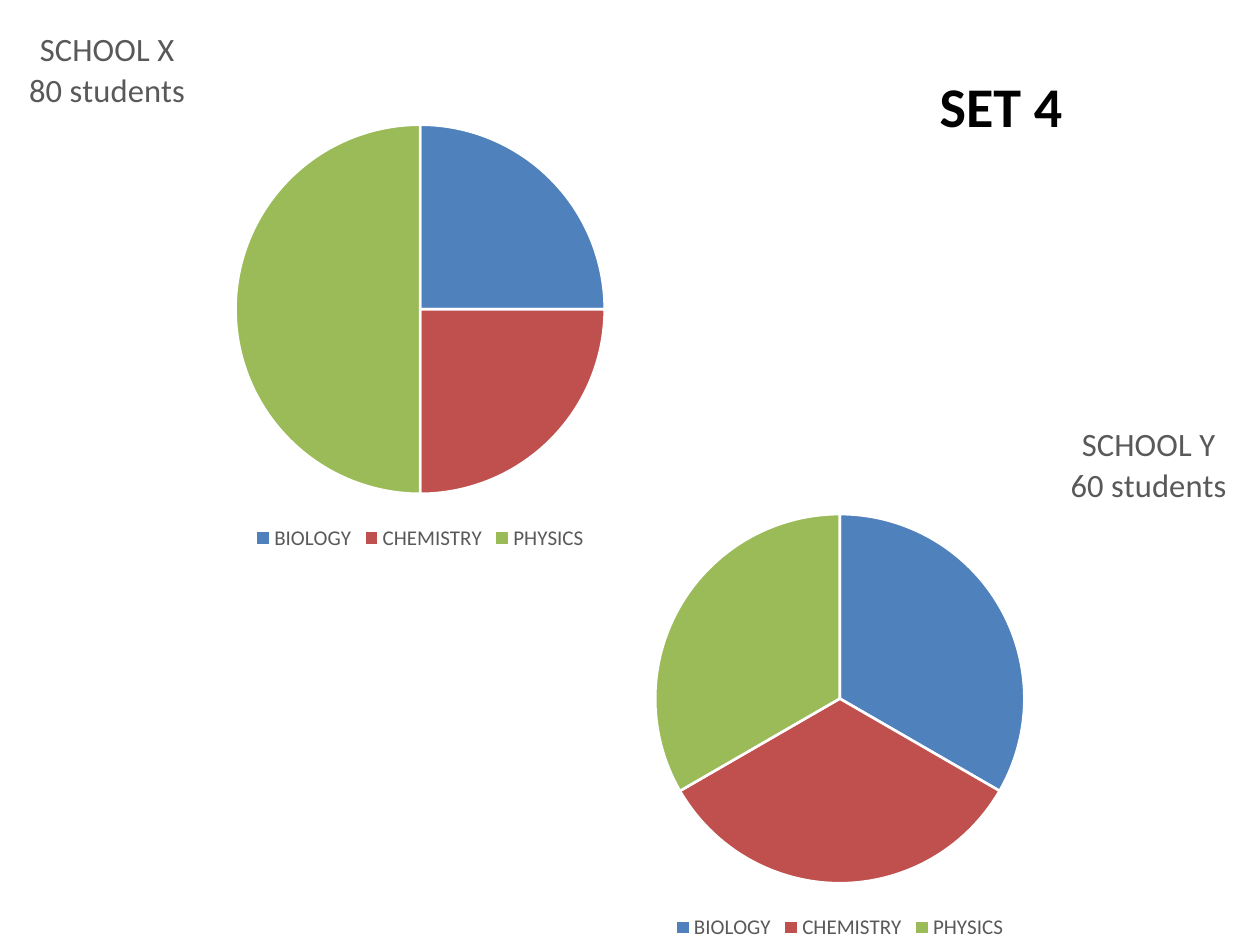
from dataclasses import dataclass

from pptx import Presentation
from pptx.chart.data import CategoryChartData
from pptx.dml.color import RGBColor
from pptx.enum.chart import XL_CHART_TYPE, XL_LEGEND_POSITION
from pptx.enum.text import MSO_ANCHOR, PP_ALIGN
from pptx.oxml import parse_xml
from pptx.oxml.ns import nsdecls
from pptx.util import Cm, Pt


@dataclass(frozen=True)
class Theme:
    font: str = "Calibri"
    black: RGBColor = RGBColor(0, 0, 0)
    grey: RGBColor = RGBColor(0x59, 0x59, 0x59)
    white: RGBColor = RGBColor(0xFF, 0xFF, 0xFF)
    slices: tuple = tuple(map(RGBColor.from_string, ("4F81BD", "C0504D", "9BBB59")))
    heading: float = 32
    chart_title: float = 18.6
    legend: float = 12
    slice_border: float = 1.5


@dataclass(frozen=True)
class School:
    name: str
    students: str
    shares: tuple
    left: float
    top: float
    title_at: tuple  # fractions of the chart's width and height


THEME = Theme()
PAGE_WIDTH, PAGE_HEIGHT = 25.4, 19.05
CHART_WIDTH, CHART_HEIGHT = 16.94, 11.28
SUBJECTS = ("BIOLOGY", "CHEMISTRY", "PHYSICS")
PIE_AREA = {"x": 0.28, "y": 0.23, "w": 0.44, "h": 0.66}
SCHOOLS = (
    School("SCHOOL X", "80 students", (25, 25, 50), 0, -0.08, (0.03, 0.05)),
    School("SCHOOL Y", "60 students", (33, 33, 33),
           PAGE_WIDTH - CHART_WIDTH, PAGE_HEIGHT - CHART_HEIGHT, (0.77, 0.06)),
)


def format_font(font, size: float, color: RGBColor, bold: bool = False) -> None:
    for name, value in {"name": THEME.font, "size": Pt(size), "bold": bold}.items():
        setattr(font, name, value)
    font.color.rgb = color


def place(parent, index: int, fractions: dict, target: str = "") -> None:
    """Give a chart part a manual layout, in fractions of the chart area."""
    for old in parent.xpath("c:layout"):
        parent.remove(old)
    inner = f'<c:layoutTarget val="{target}"/>' if target else ""
    modes = "".join(f'<c:{axis}Mode val="edge"/>' for axis in "xy")
    values = "".join(f'<c:{key} val="{value}"/>' for key, value in fractions.items())
    parent.insert(index, parse_xml(
        f'<c:layout {nsdecls("c")}><c:manualLayout>{inner}{modes}{values}'
        "</c:manualLayout></c:layout>"))


def add_chart_title(chart, school: School) -> None:
    chart.has_title = True
    frame = chart.chart_title.text_frame
    for number, line in enumerate((school.name, school.students)):
        para = frame.add_paragraph() if number else frame.paragraphs[0]
        para.alignment = PP_ALIGN.CENTER
        span = para.add_run()
        span.text = line
        format_font(span.font, THEME.chart_title, THEME.grey)
    title = chart.element.xpath("c:chart/c:title")[0]
    place(title, 1, dict(zip("xy", school.title_at)))


def add_school_pie(page, school: School) -> None:
    data = CategoryChartData()
    data.categories = SUBJECTS
    data.add_series("Series 1", school.shares)
    chart = page.shapes.add_chart(
        XL_CHART_TYPE.PIE, Cm(school.left), Cm(school.top),
        Cm(CHART_WIDTH), Cm(CHART_HEIGHT), data).chart
    format_font(chart.font, 10, THEME.black)
    add_chart_title(chart, school)

    chart.has_legend = True
    chart.legend.position = XL_LEGEND_POSITION.BOTTOM
    chart.legend.include_in_layout = False
    format_font(chart.legend.font, THEME.legend, THEME.grey)

    plot = chart.plots[0]
    plot.vary_by_categories = True
    for number, color in enumerate(THEME.slices):
        piece = plot.series[0].points[number].format
        piece.fill.solid()
        piece.fill.fore_color.rgb = color
        piece.line.color.rgb = THEME.white
        piece.line.width = Pt(THEME.slice_border)
    place(chart.element.xpath("c:chart/c:plotArea")[0], 0, PIE_AREA, "inner")


def set_heading(box, text: str) -> None:
    bounds = {"left": 18.69, "top": 1.32, "width": 3.2, "height": 1.63}
    for name, value in bounds.items():
        setattr(box, name, Cm(value))
    frame = box.text_frame
    frame.word_wrap = False
    frame.vertical_anchor = MSO_ANCHOR.TOP
    para = frame.paragraphs[0]
    para.alignment = PP_ALIGN.LEFT
    span = para.add_run()
    span.text = text
    format_font(span.font, THEME.heading, THEME.black, bold=True)


def main() -> None:
    deck = Presentation()
    deck.slide_width, deck.slide_height = Cm(PAGE_WIDTH), Cm(PAGE_HEIGHT)
    page = deck.slides.add_slide(deck.slide_layouts.get_by_name("Title Only"))
    set_heading(page.shapes.title, "SET 4")
    for school in SCHOOLS:
        add_school_pie(page, school)
    deck.save("out.pptx")


if __name__ == "__main__":
    main()
